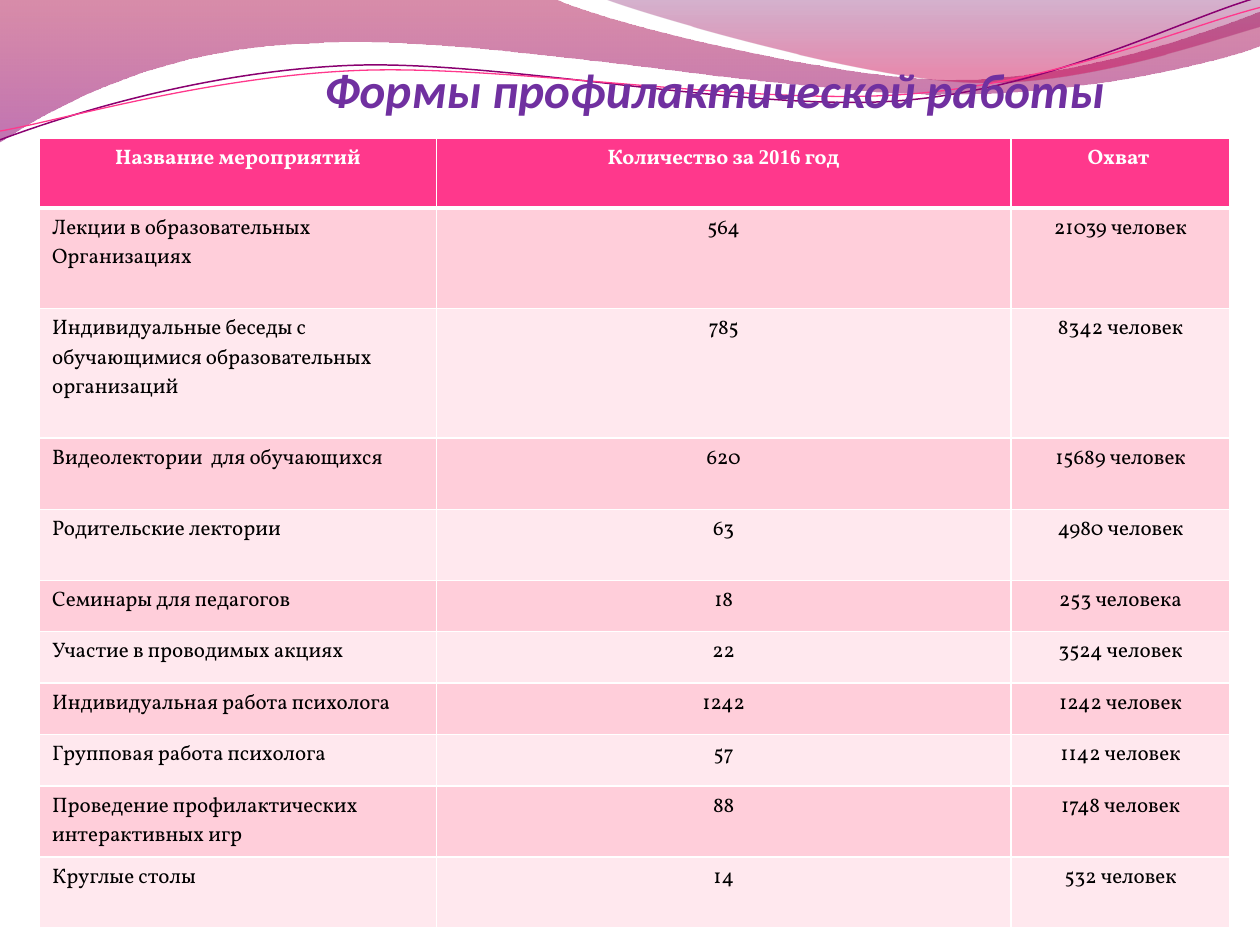
from dataclasses import dataclass
from math import cos, radians, sin

from lxml.etree import SubElement
from pptx import Presentation
from pptx.dml.color import RGBColor
from pptx.enum.text import MSO_ANCHOR, MSO_AUTO_SIZE, PP_ALIGN
from pptx.oxml.ns import qn
from pptx.util import Pt


@dataclass(frozen=True)
class Theme:
    title_font: str = "Calibri"
    body_font: str = "Vollkorn"
    year_font: str = "Times New Roman"
    title_size: int = 28
    body_size: int = 12
    title: str = "7030A0"
    header: str = "FF388C"
    bands: tuple = ("FFCEDA", "FFE8EE")
    text: str = "000000"
    light: str = "FFFFFF"
    dark_line: str = "8A0070"
    # Gradient stops: position, colour, opacity in percent
    wide_wave: tuple = ((0, "A90042", 45), (1, "8E0073", 55))
    small_wave: tuple = ((0, "73005E", 30), (0.8, "C9004F", 45))


THEME = Theme()
LINE_TILT = 357.3

# Paths in points: a start, then lines (x, y) or cubic curves (three points)
WIDE_WAVE = [
    (0, 0), (316.8, -0.7),
    (342.7, 12.2, 478, 45.4, 545.8, 45.4), (614.2, 45.4, 689.8, 18.7, 720, 6.5),
    (720.7, 25.9),
    (707.8, 31.7, 626.4, 54.7, 537.1, 54), (447.8, 54, 275, 20.2, 185, 24.5),
    (92.9, 25.9, 33.1, 59.8, -0.7, 81.4), (0, 0),
]
SMALL_WAVE = [
    (344.9, -0.7),
    (366.5, 7.9, 491, 44.6, 553.7, 46.8), (616.3, 49.7, 691.9, 23, 720, 15.1),
    (720, 0), (344.9, -0.7),
]
DARK_LINE = [
    (0, 79.9),
    (34.6, 67, 113.8, 41, 199.4, 37.4), (284.4, 33.8, 427, 64.1, 513.4, 57.6),
    (599.8, 51.1, 675.4, 10.8, 718.6, -1.4),
]
PINK_LINE = [
    (0, 74.9),
    (33.8, 69.1, 118.1, 43.9, 203.8, 40.3), (290.2, 36.7, 429.8, 60.5, 516.2, 54),
    (601.9, 48.2, 677.5, 15.1, 720, 4.3),
]

COLUMN_SHARES = (3.15, 4.56, 1.74)
HEADERS = (("Название мероприятий",), ("Количество за ", "2016", " год"), ("Охват ",))
# Row height, then the three cells
ROWS = (
    (57.5, "Лекции в образовательных\nОрганизациях", "564", "21039 человек"),
    (74, "Индивидуальные беседы с обучающимися образовательных организаций",
     "785", "8342 человек"),
    (40.7, "Видеолектории  для обучающихся", "620", "15689 человек"),
    (40.7, "Родительские лектории", "63", "4980 человек"),
    (29.2, "Семинары для педагогов", "18", "253 человека"),
    (29.4, "Участие в проводимых акциях", "22", "3524 человек"),
    (29.4, "Индивидуальная работа психолога", "1242", "1242 человек"),
    (29.4, "Групповая работа психолога", "57", "1142 человек"),
    (40.5, "Проведение профилактических интерактивных игр", "88", "1748 человек"),
    (40.5, "Круглые столы", "14", "532 человек"),
)
HEADER_HEIGHT = 40


def color(value):
    return RGBColor.from_string(value)


def rotate(path, center, degrees):
    cosine, sine = cos(radians(degrees)), sin(radians(degrees))
    center_x, center_y = center
    rotated = []
    for segment in path:
        turned = []
        for x, y in zip(segment[::2], segment[1::2]):
            x, y = x - center_x, y - center_y
            turned += [center_x + x * cosine - y * sine, center_y + x * sine + y * cosine]
        rotated.append(tuple(turned))
    return rotated


def add_outline(slide, left, top, path, close):
    """Build the outline through all its points, then bend the cubic segments."""
    points = [(Pt(left + x), Pt(top + y))
              for segment in path for x, y in zip(segment[::2], segment[1::2])]
    builder = slide.shapes.build_freeform(*points[0])
    builder.add_line_segments(points[1:], close=close)
    shape = builder.convert_to_shape()
    shape.shadow.inherit = False
    lines = iter(list(shape.element.iter(qn("a:lnTo"))))
    for segment in path[1:]:
        line = next(lines)
        if len(segment) == 6:
            curve = line.makeelement(qn("a:cubicBezTo"))
            line.addprevious(curve)
            for part in (line, next(lines), next(lines)):
                curve.append(part[0])
                part.getparent().remove(part)
    return shape


def add_wave(slide, left, top, path, stops):
    shape = add_outline(slide, left, top, path, close=True)
    shape.line.fill.background()
    shape.fill.gradient()
    shape.fill.gradient_angle = 270
    for stop, (position, value, _) in zip(shape.fill.gradient_stops, stops):
        stop.position = position
        stop.color.rgb = color(value)
    for element, (_, _, opacity) in zip(shape.element.iter(qn("a:srgbClr")), stops):
        SubElement(element, qn("a:alpha")).set("val", str(opacity * 1000))


def add_wave_line(slide, left, top, path, center, value, width):
    level_path = rotate(path, center, -LINE_TILT)
    shape = add_outline(slide, left, top, level_path, close=False)
    shape.rotation = LINE_TILT
    shape.fill.background()
    shape.line.color.rgb = color(value)
    shape.line.width = Pt(width)


def add_wave_band(slide, left, top):
    add_wave(slide, left, top, WIDE_WAVE, THEME.wide_wave)
    add_wave(slide, left, top, SMALL_WAVE, THEME.small_wave)
    add_wave_line(slide, left, top, DARK_LINE, (359.3, 41.4), THEME.dark_line, 0.85)
    add_wave_line(slide, left, top, PINK_LINE, (359.6, 42.5), THEME.header, 0.75)


def format_runs(paragraph, font, size, value, bold=False, italic=False):
    for run in paragraph.runs:
        run.font.name = font
        run.font.size = Pt(size)
        run.font.color.rgb = color(value)
        run.font.bold = bold
        run.font.italic = italic


def place_title(slide, left, top, width, height):
    title = slide.shapes.title
    title.left, title.top, title.width, title.height = map(Pt, (left, top, width, height))
    frame = title.text_frame
    frame.text = "Формы профилактической работы"
    frame.word_wrap = True
    frame.auto_size = MSO_AUTO_SIZE.NONE
    frame.vertical_anchor = MSO_ANCHOR.BOTTOM
    frame.margin_left = frame.margin_right = frame.margin_bottom = 0
    frame.margin_top = Pt(3.6)
    paragraph = frame.paragraphs[0]
    paragraph.alignment = PP_ALIGN.CENTER
    format_runs(paragraph, THEME.title_font, THEME.title_size, THEME.title, True, True)
    title.element.getparent().append(title.element)  # in front of the waves


def style_cell(cell, fill, bottom_border=1):
    properties = cell._tc.get_or_add_tcPr()
    borders = {"a:lnL": 1, "a:lnR": 1, "a:lnT": 1, "a:lnB": bottom_border}
    for tag, width in borders.items():
        line = SubElement(properties, qn(tag), w=str(Pt(width)))
        solid = SubElement(line, qn("a:solidFill"))
        SubElement(solid, qn("a:srgbClr"), val=THEME.light)
    cell.fill.solid()
    cell.fill.fore_color.rgb = color(fill)


def fill_header(cell, pieces):
    style_cell(cell, THEME.header, bottom_border=3)
    paragraph = cell.text_frame.paragraphs[0]
    paragraph.alignment = PP_ALIGN.CENTER
    for piece in pieces:
        paragraph.add_run().text = piece
    format_runs(paragraph, THEME.body_font, THEME.body_size, THEME.light, bold=True)
    for run in paragraph.runs:
        if run.text.isdigit():
            run.font.name = THEME.year_font


def add_events_table(slide, left, top, width):
    heights = [HEADER_HEIGHT] + [row[0] for row in ROWS]
    table = slide.shapes.add_table(len(heights), len(HEADERS), Pt(left), Pt(top),
                                   Pt(width), Pt(sum(heights))).table
    for column, share in zip(table.columns, COLUMN_SHARES):
        column.width = Pt(width * share / sum(COLUMN_SHARES))
    for row, height in zip(table.rows, heights):
        row.height = Pt(height)
    for column, pieces in enumerate(HEADERS):
        fill_header(table.cell(0, column), pieces)
    for index, (_, *texts) in enumerate(ROWS):
        for column, text in enumerate(texts):
            cell = table.cell(index + 1, column)
            style_cell(cell, THEME.bands[index % 2])
            cell.text_frame.text = text
            for paragraph in cell.text_frame.paragraphs:
                paragraph.alignment = PP_ALIGN.CENTER if column else PP_ALIGN.LEFT
                format_runs(paragraph, THEME.body_font, THEME.body_size, THEME.text)


def main():
    presentation = Presentation()
    presentation.slide_width, presentation.slide_height = Pt(720), Pt(540)
    slide = presentation.slides.add_slide(presentation.slide_layouts[5])
    add_wave_band(slide, 0, 0)
    place_title(slide, 113, 21.6, 590.4, 46)
    add_events_table(slide, 22.6, 78.9, 680.4)
    presentation.save("out.pptx")


if __name__ == "__main__":
    main()
